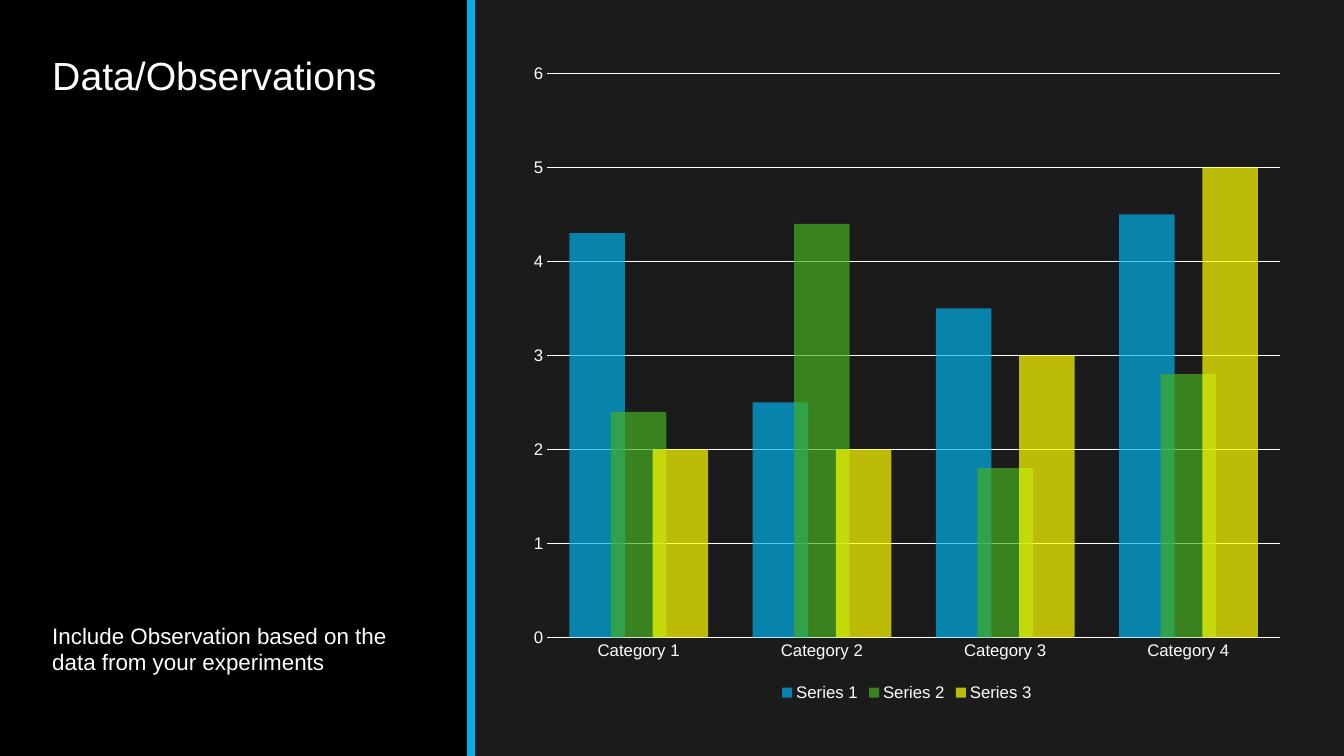
from dataclasses import dataclass

from lxml import etree
from pptx import Presentation
from pptx import util as u
from pptx.chart.data import CategoryChartData
from pptx.dml.color import RGBColor
from pptx.enum import chart as ch
from pptx.enum import shapes, text
from pptx.oxml.ns import qn


@dataclass(frozen=True)
class Theme:
    font: str = "Arial"
    background: str = "1B1B1B"
    panel: str = "000000"
    ink: str = "FFFFFF"
    accent: str = "00B0EA"
    green: str = "45AE22"
    yellow: str = "FFFF00"
    title: int = 28
    body: int = 16
    label: int = 12
    bar_alpha: int = 70


@dataclass(frozen=True)
class Box:
    left: float
    top: float
    width: float
    height: float

    def emu(self) -> list[int]:
        return [u.Inches(v) for v in (self.left, self.top, self.width, self.height)]


@dataclass(frozen=True)
class TextBlock:
    box: Box
    words: str
    size: int
    anchor: text.MSO_ANCHOR
    line_spacing: float


@dataclass(frozen=True)
class Series:
    name: str
    values: tuple[float, ...]
    color: str


THEME = Theme()
WIDTH, HEIGHT, PANEL_WIDTH = 13.33, 7.5, 4.67
CHART_BOX = Box(5.14, 0.51, 7.71, 6.49)
TEXTS = (
    TextBlock(Box(0.42, 0.51, 3.83, 1.75), "Data/Observations",
              THEME.title, text.MSO_ANCHOR.TOP, 0.9),
    TextBlock(Box(0.42, 4.1, 3.83, 2.65),
              "Include Observation based on the data from your experiments",
              THEME.body, text.MSO_ANCHOR.BOTTOM, 1.0),
)
CATEGORIES = [f"Category {n}" for n in range(1, 5)]
SERIES = (
    Series("Series 1", (4.3, 2.5, 3.5, 4.5), THEME.accent),
    Series("Series 2", (2.4, 4.4, 1.8, 2.8), THEME.green),
    Series("Series 3", (2, 2, 3, 5), THEME.yellow),
)


def rgb(color: str) -> RGBColor:
    return RGBColor.from_string(color)


def set_font(font, size: int) -> None:
    font.name = THEME.font
    font.size = u.Pt(size)
    font.color.rgb = rgb(THEME.ink)


def set_line(line, color: str, width: float) -> None:
    line.color.rgb = rgb(color)
    line.width = u.Pt(width)


def draw_panel(slide) -> None:
    sp = slide.shapes.add_shape(
        shapes.MSO_SHAPE.RECTANGLE, *Box(0, 0, PANEL_WIDTH, HEIGHT).emu())
    sp.shadow.inherit = False
    sp.fill.solid()
    sp.fill.fore_color.rgb = rgb(THEME.panel)
    sp.line.fill.background()
    x = u.Inches(PANEL_WIDTH)
    edge = slide.shapes.add_connector(
        shapes.MSO_CONNECTOR.STRAIGHT, x, 0, x, u.Inches(HEIGHT))
    set_line(edge.line, THEME.accent, 6)
    etree.SubElement(edge._element.spPr, qn("a:effectLst"))


def draw_text(slide, block: TextBlock) -> None:
    tf = slide.shapes.add_textbox(*block.box.emu()).text_frame
    tf.word_wrap = True
    tf.vertical_anchor = block.anchor
    p = tf.paragraphs[0]
    p.text = block.words
    p.line_spacing = block.line_spacing
    set_font(p.font, block.size)


def fill_bars(plot_series, color: str) -> None:
    fill = plot_series.format.fill
    fill.solid()
    fill.fore_color.rgb = rgb(color)
    plot_series.invert_if_negative = False
    for clr in plot_series._element.spPr.iter(qn("a:srgbClr")):
        etree.SubElement(clr, qn("a:alpha"), val=str(THEME.bar_alpha * 1000))


def draw_chart(slide) -> None:
    data = CategoryChartData()
    data.categories = CATEGORIES
    for series in SERIES:
        data.add_series(series.name, series.values)
    chart = slide.shapes.add_chart(
        ch.XL_CHART_TYPE.COLUMN_CLUSTERED, *CHART_BOX.emu(), data).chart
    set_font(chart.font, THEME.label)
    chart.has_title = False
    chart.has_legend = True
    chart.legend.position = ch.XL_LEGEND_POSITION.BOTTOM
    chart.legend.include_in_layout = False
    set_font(chart.legend.font, THEME.label)

    plot = chart.plots[0]
    plot.gap_width, plot.overlap = 80, 25
    plot.vary_by_categories = False
    for plot_series, series in zip(plot.series, SERIES):
        fill_bars(plot_series, series.color)

    for axis in (chart.category_axis, chart.value_axis):
        axis.major_tick_mark = axis.minor_tick_mark = ch.XL_TICK_MARK.NONE
        set_font(axis.tick_labels.font, THEME.label)
    set_line(chart.category_axis.format.line, THEME.ink, 1.25)
    values = chart.value_axis
    values.minimum_scale, values.maximum_scale, values.major_unit = 0, 6, 1
    values.format.line.fill.background()
    values.has_major_gridlines = True
    set_line(values.major_gridlines.format.line, THEME.ink, 0.75)


def main() -> None:
    prs = Presentation()
    prs.slide_width, prs.slide_height = u.Inches(WIDTH), u.Inches(HEIGHT)
    s = prs.slides.add_slide(prs.slide_layouts[6])
    s.background.fill.solid()
    s.background.fill.fore_color.rgb = rgb(THEME.background)
    draw_panel(s)
    for block in TEXTS:
        draw_text(s, block)
    draw_chart(s)
    prs.save("out.pptx")


if __name__ == "__main__":
    main()
